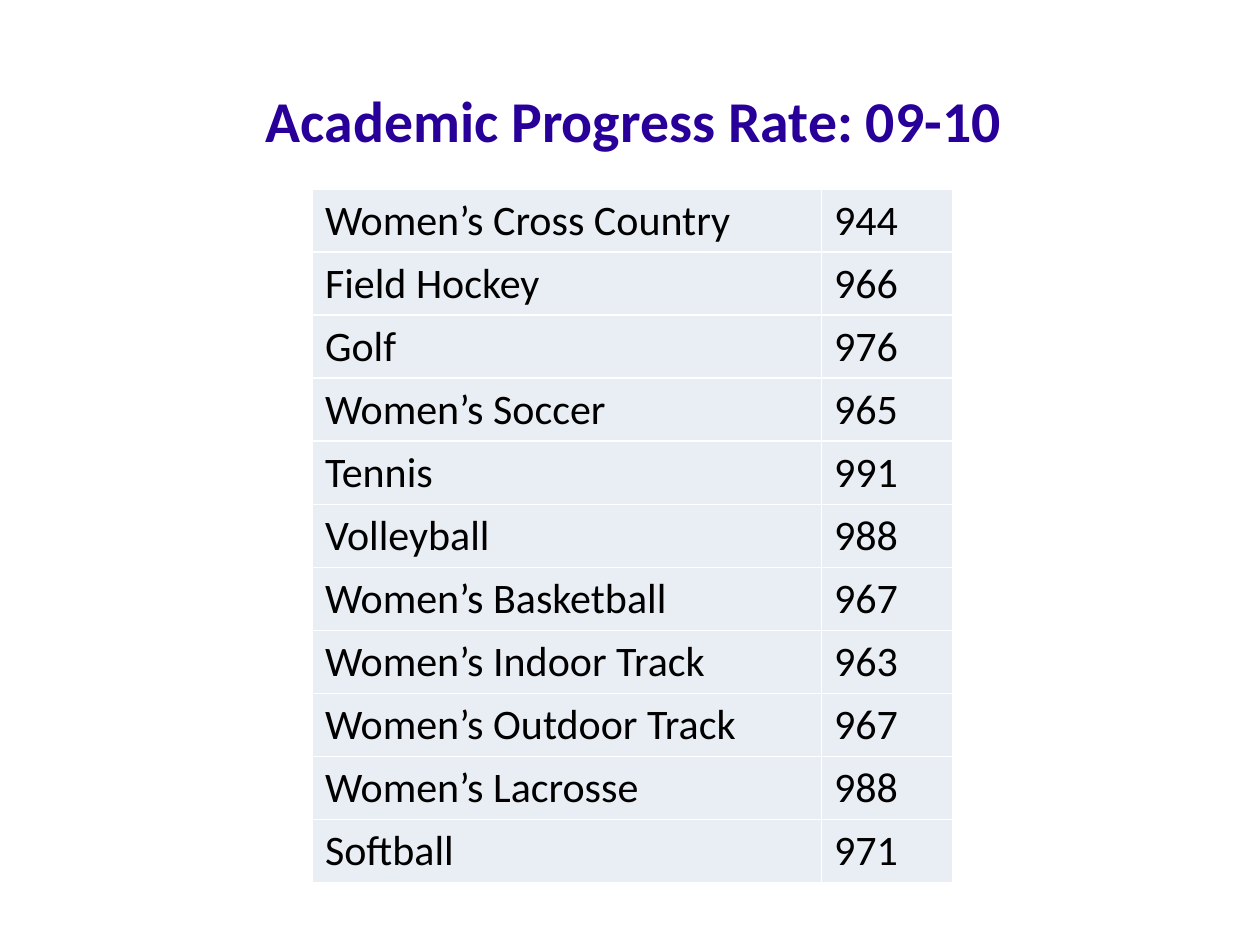
from lxml import etree
from pptx import Presentation
from pptx.dml.color import RGBColor
from pptx.enum import text
from pptx.oxml import ns
from pptx.util import Inches, Pt

FONT = "Calibri"
INDIGO = RGBColor(0x28, 0x00, 0x99)
BLACK = RGBColor(0x00, 0x00, 0x00)
WHITE = RGBColor(0xFF, 0xFF, 0xFF)
PALE_BLUE = RGBColor(0xE9, 0xED, 0xF4)

RATES = [
    ("Women’s Cross Country", 944),
    ("Field Hockey", 966),
    ("Golf", 976),
    ("Women’s Soccer", 965),
    ("Tennis", 991),
    ("Volleyball", 988),
    ("Women’s Basketball", 967),
    ("Women’s Indoor Track", 963),
    ("Women’s Outdoor Track", 967),
    ("Women’s Lacrosse", 988),
    ("Softball", 971),
]
COLUMN_WIDTHS = (4.04, 1.04)
ROW_HEIGHT = 0.5


def format_runs(p, size, color, bold=False):
    for r in p.runs:
        r.font.name = FONT
        r.font.size = Pt(size)
        r.font.bold = bold
        r.font.color.rgb = color


def add_title(slide, title):
    sp = slide.shapes.add_textbox(Inches(0.53), Inches(0.23), Inches(9), Inches(1.43))
    tf = sp.text_frame
    tf.word_wrap = True
    tf.vertical_anchor = text.MSO_ANCHOR.MIDDLE
    tf.margin_left = tf.margin_right = tf.margin_top = tf.margin_bottom = 0
    tf.text = title
    p = tf.paragraphs[0]
    p.alignment = text.PP_ALIGN.CENTER
    format_runs(p, 33, INDIGO, bold=True)


def set_borders(cell, color, width):
    tc_pr = cell._tc.get_or_add_tcPr()
    # Border lines must come before the cell fill
    for i, side in enumerate(("a:lnL", "a:lnR", "a:lnT", "a:lnB")):
        ln = etree.Element(ns.qn(side), w=str(Pt(width)))
        fill = etree.SubElement(ln, ns.qn("a:solidFill"))
        etree.SubElement(fill, ns.qn("a:srgbClr"), val=str(color))
        tc_pr.insert(i, ln)


def fill_cell(cell, value):
    cell.text = str(value)
    format_runs(cell.text_frame.paragraphs[0], 24, BLACK)
    cell.fill.solid()
    cell.fill.fore_color.rgb = PALE_BLUE
    set_borders(cell, WHITE, 1)


def add_rate_table(slide, rates):
    table = slide.shapes.add_table(
        len(rates), len(COLUMN_WIDTHS), Inches(2.48), Inches(1.5),
        Inches(sum(COLUMN_WIDTHS)), Inches(ROW_HEIGHT * len(rates))).table
    table.first_row = False
    table.horz_banding = False
    for column, width in zip(table.columns, COLUMN_WIDTHS):
        column.width = Inches(width)
    for row, values in zip(table.rows, rates):
        row.height = Inches(ROW_HEIGHT)
        for cell, value in zip(row.cells, values):
            fill_cell(cell, value)


def main():
    prs = Presentation()
    prs.slide_width, prs.slide_height = Inches(10), Inches(7.5)
    slide = prs.slides.add_slide(prs.slide_layouts[6])

    # Heading
    add_title(slide, "Academic Progress Rate: 09-10")

    # Rate for each team
    add_rate_table(slide, RATES)

    prs.save("out.pptx")


if __name__ == "__main__":
    main()
